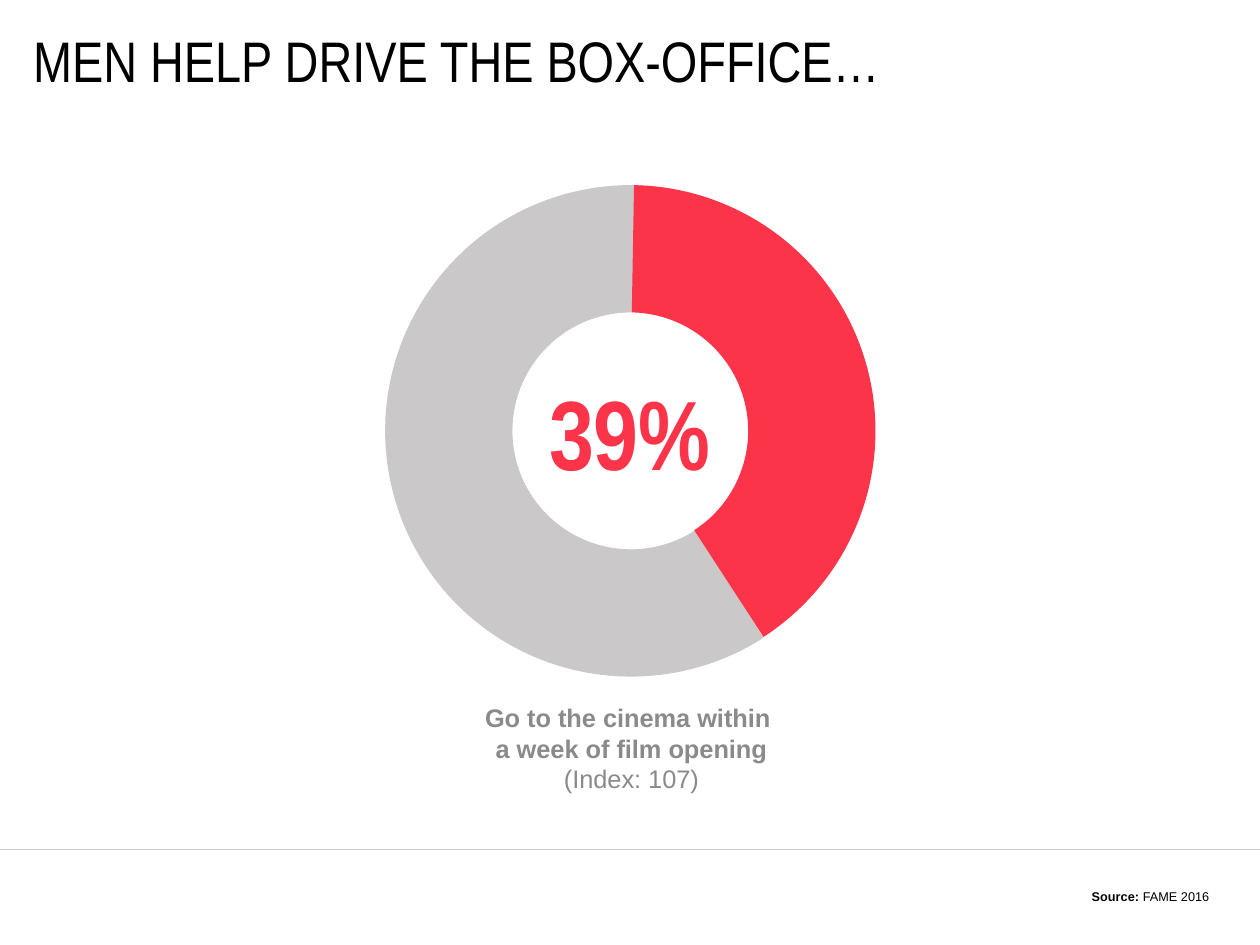
from dataclasses import dataclass

from lxml import etree
from pptx import Presentation
from pptx.dml.color import RGBColor
from pptx.enum.shapes import MSO_CONNECTOR, MSO_SHAPE
from pptx.enum.text import MSO_ANCHOR, MSO_AUTO_SIZE, PP_ALIGN
from pptx.oxml.ns import qn
from pptx.util import Inches, Pt

STRAIGHT = MSO_CONNECTOR.STRAIGHT
BLOCK_ARC = MSO_SHAPE.BLOCK_ARC
MIDDLE, BOTTOM = MSO_ANCHOR.MIDDLE, MSO_ANCHOR.BOTTOM
LEFT, CENTER, RIGHT = PP_ALIGN.LEFT, PP_ALIGN.CENTER, PP_ALIGN.RIGHT
NO_AUTOFIT = MSO_AUTO_SIZE.NONE
TITLE_ONLY = 5
CM_PER_INCH = 2.54
SLIDE_WIDTH, SLIDE_HEIGHT = 28 / CM_PER_INCH, 21 / CM_PER_INCH
ADJUSTMENT_PER_DEGREE = 0.6


@dataclass(frozen=True)
class Theme:
    ink: RGBColor = RGBColor.from_string("000000")
    red: RGBColor = RGBColor.from_string("FB3449")
    ring: RGBColor = RGBColor.from_string("CAC8C8")
    caption: RGBColor = RGBColor.from_string("8A8A8D")
    body_font: str = "Arial"
    display_font: str = "Arial Narrow"
    title_size: int = 36
    share_size: int = 62
    caption_size: int = 16
    source_size: int = 8


THEME = Theme()


def add_run(paragraph, text, size, color, font=THEME.body_font, bold=False):
    run = paragraph.add_run()
    run.text = text
    run.font.name = font
    run.font.size = Pt(size)
    run.font.bold = bold
    run.font.color.rgb = color


def add_text_frame(slide, box, anchor):
    frame = slide.shapes.add_textbox(*map(Inches, box)).text_frame
    frame.word_wrap = True
    frame.vertical_anchor = anchor
    return frame


def add_title(slide, box):
    title = slide.shapes.title
    title.left, title.top, title.width, title.height = map(Inches, box)
    frame = title.text_frame
    frame.margin_left = frame.margin_right = 0
    frame.margin_top = frame.margin_bottom = 0
    frame.word_wrap = False
    frame.auto_size = NO_AUTOFIT
    frame.vertical_anchor = MIDDLE
    heading = frame.paragraphs[0]
    heading.alignment = LEFT
    add_run(heading, "MEN HELP DRIVE THE BOX-OFFICE…",
            THEME.title_size, THEME.ink, THEME.display_font)


def add_ring_part(slide, box, start, end, color):
    arc = slide.shapes.add_shape(BLOCK_ARC, *map(Inches, box))
    arc.adjustments[0] = start * ADJUSTMENT_PER_DEGREE
    arc.adjustments[1] = end * ADJUSTMENT_PER_DEGREE
    arc.adjustments[2] = 0.259
    arc.shadow.inherit = False
    arc.fill.solid()
    arc.fill.fore_color.rgb = color
    arc.line.fill.background()


def add_share_ring(slide, box):
    left, top, width, height = box
    add_ring_part(slide, (left + 0.01, top, width, height), 57.34, 270.87, THEME.ring)
    label_width, label_height = 2.22, 1.14
    label_box = (left + (width - label_width) / 2,
                 top + (height - label_height) / 2,
                 label_width, label_height)
    share = add_text_frame(slide, label_box, MIDDLE).paragraphs[0]
    share.alignment = CENTER
    add_run(share, "39%", THEME.share_size, THEME.red, THEME.display_font, bold=True)
    add_ring_part(slide, box, 271.01, 57.01, THEME.red)


def add_caption(slide, box):
    frame = add_text_frame(slide, box, MIDDLE)
    habit = frame.paragraphs[0]
    add_run(habit, "Go to the cinema within ", THEME.caption_size, THEME.caption, bold=True)
    habit.add_line_break()
    add_run(habit, "a week of film opening", THEME.caption_size, THEME.caption, bold=True)
    index = frame.add_paragraph()
    add_run(index, "(Index: 107)", THEME.caption_size, THEME.caption)
    habit.alignment = index.alignment = CENTER


def add_footer(slide, box):
    left, top, width, height = box
    rule = slide.shapes.add_connector(
        STRAIGHT, Inches(left), Inches(top), Inches(left + width), Inches(top))
    rule.line.color.rgb = THEME.ring
    rule.line.width = Pt(0.5)
    etree.SubElement(rule._element.spPr, qn("a:effectLst"))
    source_box = (left + 4.81, top + 0.29, 5.87, 0.24)
    source = add_text_frame(slide, source_box, BOTTOM).paragraphs[0]
    source.alignment = RIGHT
    add_run(source, "Source: ", THEME.source_size, THEME.ink, bold=True)
    add_run(source, "FAME 2016", THEME.source_size, THEME.ink)


def main():
    deck = Presentation()
    deck.slide_width, deck.slide_height = Inches(SLIDE_WIDTH), Inches(SLIDE_HEIGHT)
    slide = deck.slides.add_slide(deck.slide_layouts[TITLE_ONLY])
    add_title(slide, (0.29, 0.3, 10.18, 0.45))
    add_share_ring(slide, (3.36, 1.62, 4.3, 4.3))
    add_caption(slide, (2.31, 6.09, 6.43, 0.91))
    add_footer(slide, (0, 7.43, SLIDE_WIDTH, 0.84))
    deck.save("out.pptx")


if __name__ == "__main__":
    main()
